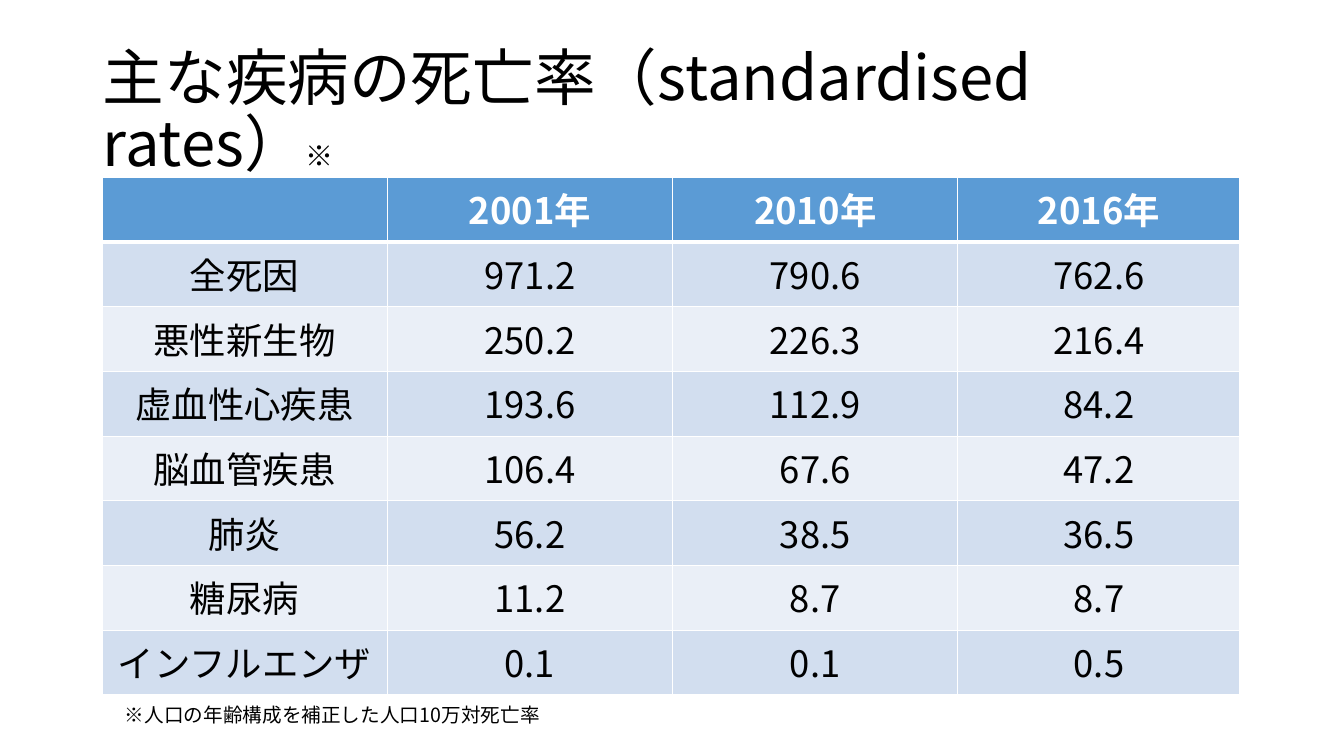
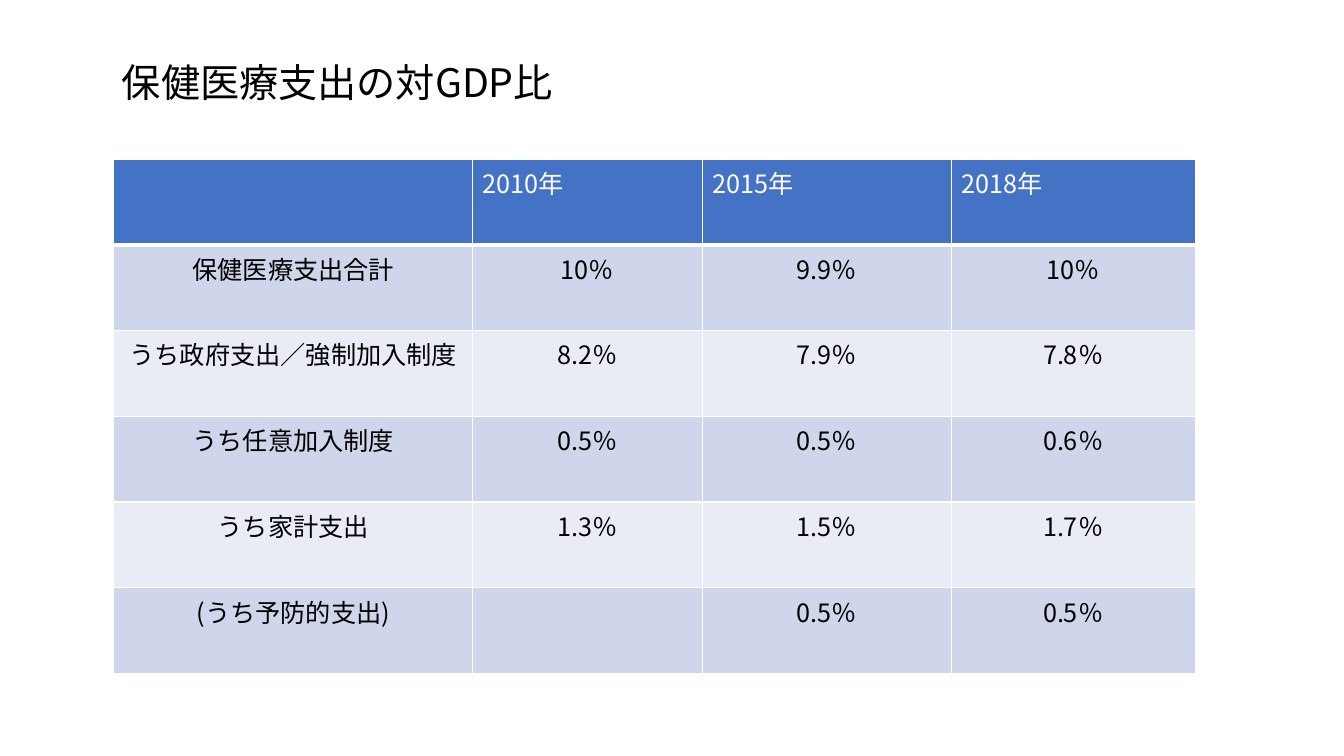
from pptx import Presentation
from pptx import oxml
from pptx.dml.color import RGBColor
from pptx.enum import lang, text
from pptx.oxml import ns
from pptx.util import Cm, Pt

FONT = "Noto Sans CJK JP"
BLACK = RGBColor(0x00, 0x00, 0x00)
WHITE = RGBColor(0xFF, 0xFF, 0xFF)
SKY_BANDS = [RGBColor(0x5B, 0x9B, 0xD5), RGBColor(0xD2, 0xDE, 0xEF), RGBColor(0xEA, 0xEF, 0xF7)]
NAVY_BANDS = [RGBColor(0x44, 0x72, 0xC4), RGBColor(0xCF, 0xD5, 0xEA), RGBColor(0xE9, 0xEB, 0xF5)]
LEFT, CENTER = text.PP_ALIGN.LEFT, text.PP_ALIGN.CENTER


def write(frame, wording, size, color=BLACK, bold=False, align=LEFT, spacing=None):
    paragraph = frame.paragraphs[0]
    paragraph.alignment = align
    paragraph.line_spacing = spacing
    run = paragraph.add_run()
    run.text = wording
    run.font.name = FONT
    run.font.size = Pt(size)
    run.font.bold = bold
    run.font.color.rgb = color
    run.font.language_id = lang.MSO_LANGUAGE_ID.JAPANESE
    east_asian = oxml.parse_xml(f'<a:ea {ns.nsdecls("a")} typeface="{FONT}"/>')
    run.font._element.append(east_asian)


def set_borders(cell, bottom):
    for side, width in (("L", 1), ("R", 1), ("T", 1), ("B", bottom)):
        cell._tc.get_or_add_tcPr().append(oxml.parse_xml(
            f'<a:ln{side} {ns.nsdecls("a")} w="{Pt(width)}"><a:solidFill>'
            f'<a:srgbClr val="{WHITE}"/></a:solidFill></a:ln{side}>'))


mortality = [
    ["", "2001年", "2010年", "2016年"],
    ["全死因", "971.2", "790.6", "762.6"],
    ["悪性新生物", "250.2", "226.3", "216.4"],
    ["虚血性心疾患", "193.6", "112.9", "84.2"],
    ["脳血管疾患", "106.4", "67.6", "47.2"],
    ["肺炎", "56.2", "38.5", "36.5"],
    ["糖尿病", "11.2", "8.7", "8.7"],
    ["インフルエンザ", "0.1", "0.1", "0.5"],
]
spending = [
    ["", "2010年", "2015年", "2018年"],
    ["保健医療支出合計", "10％", "9.9％", "10％"],
    ["うち政府支出／強制加入制度", "8.2％", "7.9％", "7.8％"],
    ["うち任意加入制度", "0.5％", "0.5％", "0.6％"],
    ["うち家計支出", "1.3％", "1.5％", "1.7％"],
    ["(うち予防的支出)", "", "0.5％", "0.5％"],
]
pages = [
    dict(title=[("主な疾病の死亡率（standardised rates）", 44), ("※", 20)],
         title_box=(2.34, 1.02, 29.21, 3.68), rows=mortality, corner=(2.57, 4.47),
         widths=(7.19, 7.19, 7.19, 7.11), row_height=1.63, size=26,
         bands=SKY_BANDS, header=dict(bold=True, align=CENTER),
         note="※人口の年齢構成を補正した人口10万対死亡率"),
    dict(title=[("保健医療支出の対GDP比", 28)],
         title_box=(2.82, 1.4, 15.44, 1.45), rows=spending, corner=(2.87, 4.01),
         widths=(9.04, 5.79, 6.27, 6.15), row_height=2.16, size=18,
         bands=NAVY_BANDS, header=dict(align=LEFT), note=None),
]

deck = Presentation()
deck.slide_width, deck.slide_height = Cm(33.87), Cm(19.05)
title_only = deck.slide_layouts[5]

for page in pages:
    slide = deck.slides.add_slide(title_only)

    title = slide.shapes.title
    title.left, title.top, title.width, title.height = map(Cm, page["title_box"])
    title.text_frame.auto_size = text.MSO_AUTO_SIZE.NONE
    title.text_frame.vertical_anchor = text.MSO_ANCHOR.MIDDLE
    for wording, size in page["title"]:
        write(title.text_frame, wording, size, spacing=0.9)

    rows, widths = page["rows"], page["widths"]
    left, top = page["corner"]
    rates = slide.shapes.add_table(
        len(rows), len(widths), Cm(left), Cm(top),
        Cm(sum(widths)), Cm(page["row_height"] * len(rows))).table
    for column, width in zip(rates.columns, widths):
        column.width = Cm(width)

    header_band, odd_band, even_band = page["bands"]
    for r, row in enumerate(rows):
        rates.rows[r].height = Cm(page["row_height"])
        if r == 0:
            band, style = header_band, dict(color=WHITE, **page["header"])
        else:
            band, style = (odd_band if r % 2 else even_band), dict(align=CENTER)
        for c, wording in enumerate(row):
            cell = rates.cell(r, c)
            set_borders(cell, bottom=1 if r else 3)
            cell.fill.solid()
            cell.fill.fore_color.rgb = band
            if wording:
                write(cell.text_frame, wording, page["size"], **style)

    if page["note"]:
        note = slide.shapes.add_textbox(Cm(2.9), Cm(17.6), Cm(19), Cm(0.86)).text_frame
        note.word_wrap = True
        write(note, page["note"], 14)

deck.save("out.pptx")
